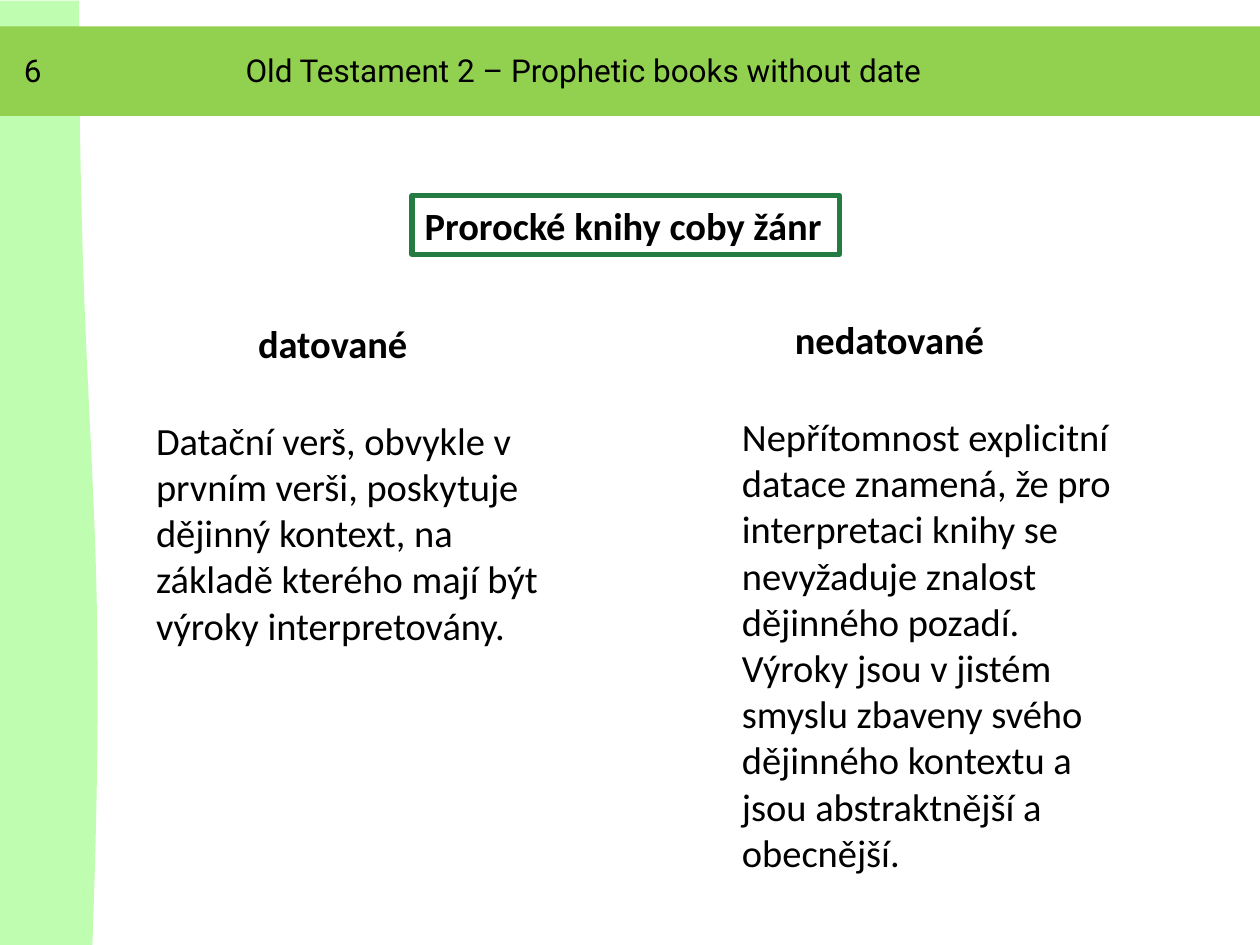
from pptx import Presentation
from pptx.dml.color import RGBColor
from pptx.enum.shapes import MSO_SHAPE
from pptx.enum.text import MSO_ANCHOR, MSO_AUTO_SIZE, PP_ALIGN
from pptx.oxml.ns import qn
from pptx.util import Inches, Pt
from lxml.etree import SubElement

COLORS = {"wave": "BFFDB1", "band": "92D050", "frame": "247C43", "text": "000000"}
HEADER = "Old Testament 2 – Prophetic books without date"
PAGE_NUMBER = "6"
TITLE = "Prorocké knihy coby žánr"
COLUMNS = [
    {
        "heading": "datované",
        "heading_place": (1.95, 2.49, 1.4, 0.47),
        "body": "Datační verš, obvykle v prvním verši, poskytuje dějinný kontext, "
                "na základě kterého mají být výroky interpretovány.",
        "body_place": (1.14, 3.26, 3.31, 1.95),
    },
    {
        "heading": "nedatované",
        "heading_place": (6.21, 2.46, 1.72, 0.47),
        "body": "Nepřítomnost explicitní datace znamená, že pro interpretaci knihy se "
                "nevyžaduje znalost dějinného pozadí. Výroky jsou v jistém smyslu zbaveny "
                "svého dějinného kontextu a jsou abstraktnější a obecnější.",
        "body_place": (5.79, 3.23, 3.31, 3.8),
    },
]


def color(name):
    return RGBColor.from_string(COLORS[name])


def add_filled(page, kind, place, fill, rotation=0):
    shape = page.shapes.add_shape(kind, *map(Inches, place))
    shape.rotation = rotation
    shape.shadow.inherit = False
    shape.fill.solid()
    shape.fill.fore_color.rgb = color(fill)
    shape.line.fill.background()
    return shape


def write(box, text, font="Calibri", size=22, bold=False, wrap=True):
    frame = box.text_frame
    frame.word_wrap = wrap
    frame.auto_size = MSO_AUTO_SIZE.NONE
    frame.vertical_anchor = MSO_ANCHOR.TOP
    para = frame.paragraphs[0]
    para.alignment = PP_ALIGN.LEFT
    span = para.add_run()
    span.text = text
    span.font.name = font
    span.font.size = Pt(size)
    span.font.bold = bold
    span.font.color.rgb = color("text")


def add_text(page, place, text, **style):
    write(page.shapes.add_textbox(*map(Inches, place)), text, **style)


def frame_title(title):
    title.left, title.top, title.width, title.height = map(Inches, (3.27, 1.55, 3.39, 0.47))
    title.line.color.rgb = color("frame")
    title.line.width = Pt(3)
    SubElement(title.line._get_or_add_ln(), qn("a:round"))
    write(title, TITLE, bold=True, wrap=False)


def main():
    deck = Presentation()
    deck.slide_width, deck.slide_height = Inches(10), Inches(7.5)
    page = deck.slides.add_slide(deck.slide_layouts[5])

    add_filled(page, MSO_SHAPE.FLOWCHART_DOCUMENT, (-3.36, 3.36, 7.5, 0.79), "wave", 270)
    add_filled(page, MSO_SHAPE.RECTANGLE, (-0.28, 0.21, 11.02, 0.71), "band")
    header = add_filled(page, MSO_SHAPE.RECTANGLE, (1.85, 0.36, 8.15, 0.4), "band")
    write(header, HEADER, font="Roboto", size=18)
    add_text(page, (0.09, 0.36, 0.31, 0.4), PAGE_NUMBER, font="Roboto", size=18, wrap=False)

    frame_title(page.shapes.title)
    for column in COLUMNS:
        add_text(page, column["heading_place"], column["heading"], bold=True, wrap=False)
        add_text(page, column["body_place"], column["body"])

    deck.save("out.pptx")


if __name__ == "__main__":
    main()
